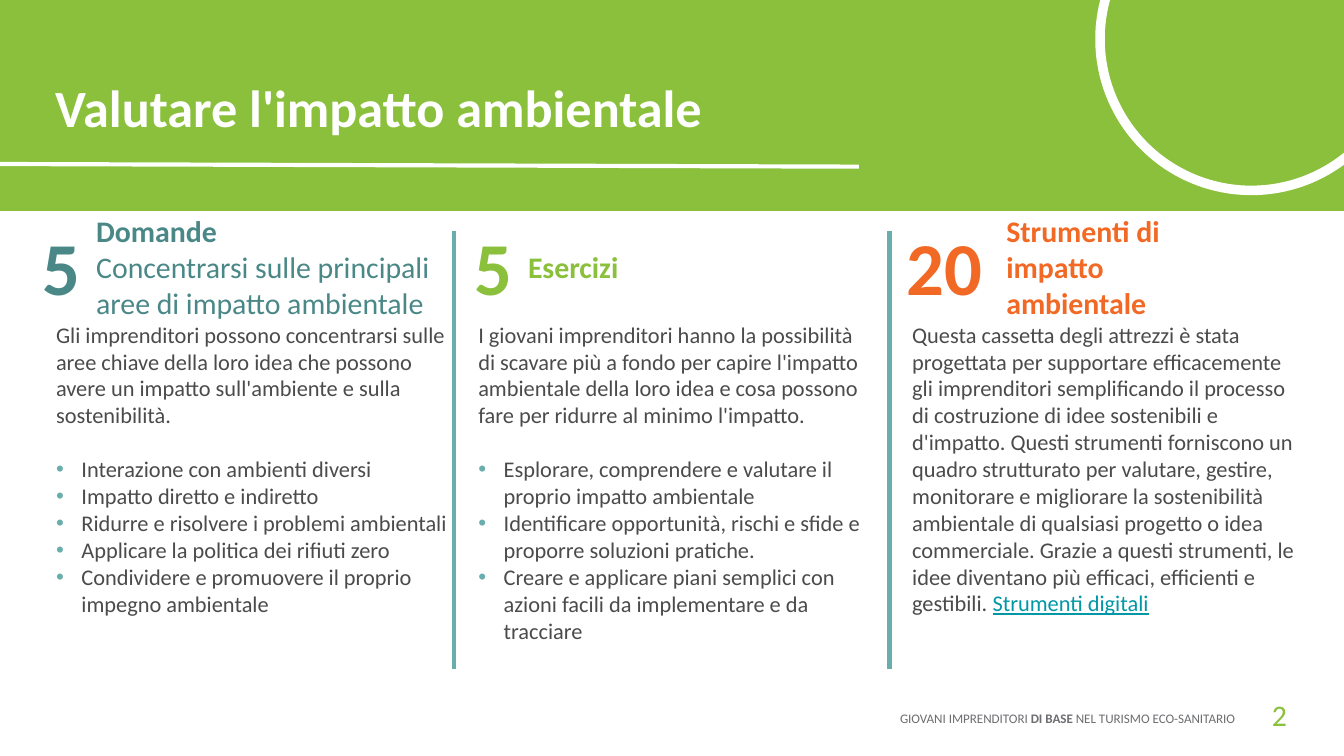
from math import acos, asin, cos, pi, sin

from lxml.etree import SubElement
from pptx import Presentation
from pptx.dml.color import RGBColor
from pptx.enum.shapes import MSO_CONNECTOR, MSO_SHAPE
from pptx.enum.text import MSO_ANCHOR, PP_ALIGN
from pptx.oxml.ns import qn
from pptx.util import Cm, Pt

COLORS = {
    "green": "8AC03B",
    "teal": "4A8887",
    "light teal": "69ADAD",
    "orange": "F16924",
    "text": "4B4B4B",
    "footer": "6D6E71",
    "link": "0097A7",
    "white": "FFFFFF",
}


def color(name):
    return RGBColor.from_string(COLORS[name])


def write(frame, paragraphs, size, ink, bold=False, align=PP_ALIGN.LEFT,
          anchor=MSO_ANCHOR.TOP, bullets=False, spacing=None):
    """Write paragraphs, each a list of (text, format changes) runs.

    With bullets, every paragraph after the first is a list item.
    """
    frame.word_wrap = True
    frame.vertical_anchor = anchor
    for index, runs in enumerate(paragraphs):
        paragraph = frame.add_paragraph() if index else frame.paragraphs[0]
        if bullets and index:
            properties = paragraph._p.get_or_add_pPr()
            properties.set("marL", str(Cm(0.48)))
            properties.set("indent", str(-Cm(0.48)))
            bullet_color = SubElement(properties, qn("a:buClr"))
            SubElement(bullet_color, qn("a:srgbClr"), val=COLORS["light teal"])
            SubElement(properties, qn("a:buFont"), typeface="Arial")
            SubElement(properties, qn("a:buChar"), char="•")
            paragraph.space_before = Pt(14.6 if index == 1 else 0)
        paragraph.alignment = align
        if spacing:
            paragraph.line_spacing = spacing
        for text, changes in runs:
            run = paragraph.add_run()
            run.text = text
            run.font.name = "Calibri"
            run.font.size = Pt(size)
            run.font.bold = changes.get("bold", bold)
            run.font.underline = changes.get("underline")
            run.font.color.rgb = color(changes.get("ink", ink))


prs = Presentation()
prs.slide_width, prs.slide_height = Cm(25.4), Cm(14.29)
slide = prs.slides.add_slide(prs.slide_layouts[5])
shapes = slide.shapes

# Header band, behind the title
title = shapes.title
band = shapes.add_shape(MSO_SHAPE.RECTANGLE, 0, 0, prs.slide_width, Cm(3.99))
title.element.addprevious(band.element)

# Corner ring, cut off by the top and right slide edges
center_x, center_y = 23.65, 0.74
steps = 60
ring_points = []
for radius, direction in ((2.95, 1), (2.77, -1)):
    start = pi + asin(center_y / radius)
    end = acos((25.4 - center_x) / radius)
    angles = [start + (end - start) * step / steps for step in range(steps + 1)]
    ring_points += [(Cm(center_x + radius * cos(angle)), Cm(center_y + radius * sin(angle)))
                    for angle in angles[::direction]]
outline = shapes.build_freeform(*ring_points[0])
outline.add_line_segments(ring_points[1:], close=True)
ring = outline.convert_to_shape()

for shape, fill in ((band, "green"), (ring, "white")):
    shape.shadow.inherit = False
    shape.fill.solid()
    shape.fill.fore_color.rgb = color(fill)
    shape.line.fill.background()

title.left, title.top, title.width, title.height = Cm(0.79), Cm(1.3), Cm(17.98), Cm(1.85)
write(title.text_frame, [[("Valutare l'impatto ambientale", {})]], size=28, ink="white", bold=True)

# Title rule and column dividers
for x1, y1, x2, y2, ink in (
    (0, 3.1, 16.23, 3.15, "white"),
    (8.58, 12.65, 8.58, 4.37, "light teal"),
    (16.81, 12.65, 16.81, 4.37, "light teal"),
):
    rule = shapes.add_connector(MSO_CONNECTOR.STRAIGHT, Cm(x1), Cm(y1), Cm(x2), Cm(y2))
    rule.line.color.rgb = color(ink)
    rule.line.width = Pt(2.25)
    SubElement(rule.element.spPr, qn("a:effectLst"))

# Columns: number and its left, heading and its left and width, body and its left
columns = [
    ("teal", "5", 0.56, 1.57, 7.04,
     [[("Domande", {})],
      [("Concentrarsi sulle principali aree di impatto ambientale", {"bold": False})]],
     0.81,
     [[("Gli imprenditori possono concentrarsi sulle aree chiave della loro idea che possono "
        "avere un impatto sull'ambiente e sulla sostenibilità.", {})],
      [("Interazione con ambienti diversi", {})],
      [("Impatto diretto e indiretto", {})],
      [("Ridurre e risolvere i problemi ambientali", {})],
      [("Applicare la politica dei rifiuti zero", {})],
      [("Condividere e promuovere il proprio impegno ambientale", {})]]),
    ("green", "5", 8.71, 9.73, 5.84,
     [[("Esercizi", {})]],
     8.79,
     [[("I giovani imprenditori hanno la possibilità di scavare più a fondo per capire "
        "l'impatto ambientale della loro idea e cosa possono fare per ridurre al minimo "
        "l'impatto.", {})],
      [("Esplorare, comprendere e valutare il proprio impatto ambientale", {})],
      [("Identificare opportunità, rischi e sfide e proporre soluzioni pratiche.", {})],
      [("Creare e applicare piani semplici con azioni facili da implementare e da tracciare", {})]]),
    ("orange", "20", 16.89, 18.77, 4.83,
     [[("Strumenti di impatto ambientale", {})]],
     16.99,
     [[("Questa cassetta degli attrezzi è stata progettata per supportare efficacemente gli "
        "imprenditori semplificando il processo di costruzione di idee sostenibili e "
        "d'impatto. Questi strumenti forniscono un quadro strutturato per valutare, gestire, "
        "monitorare e migliorare la sostenibilità ambientale di qualsiasi progetto o idea "
        "commerciale. Grazie a questi strumenti, le idee diventano più efficaci, efficienti "
        "e gestibili. ", {}),
       ("Strumenti digitali", {"ink": "link", "underline": True})]]),
]
for ink, number, number_left, heading_left, heading_width, heading, body_left, body in columns:
    body_box = shapes.add_textbox(Cm(body_left), Cm(5.94), Cm(7.9), Cm(5.94))
    write(body_box.text_frame, body, size=12, ink="text", bullets=True)
    heading_box = shapes.add_textbox(Cm(heading_left), Cm(4.04), Cm(heading_width), Cm(2))
    write(heading_box.text_frame, heading, size=16, ink=ink, bold=True,
          anchor=MSO_ANCHOR.MIDDLE, spacing=1.01)
    number_box = shapes.add_textbox(Cm(number_left), Cm(4.29), Cm(2.18), Cm(1.47))
    write(number_box.text_frame, [[(number, {})]], size=40, ink=ink, bold=True,
          anchor=MSO_ANCHOR.MIDDLE)

# Footer and page number
footer = shapes.add_textbox(Cm(11.63), Cm(13.06), Cm(11.96), Cm(1.04))
write(footer.text_frame,
      [[("GIOVANI IMPRENDITORI ", {}), ("DI BASE ", {"bold": True}),
        ("NEL TURISMO ECO-SANITARIO", {})]],
      size=7, ink="footer", align=PP_ALIGN.RIGHT, anchor=MSO_ANCHOR.MIDDLE)
page_number = shapes.add_textbox(Cm(23.52), Cm(12.85), Cm(1.32), Cm(1.3))
write(page_number.text_frame, [[("2", {})]], size=16, ink="green",
      align=PP_ALIGN.CENTER, anchor=MSO_ANCHOR.MIDDLE)

prs.save("out.pptx")
